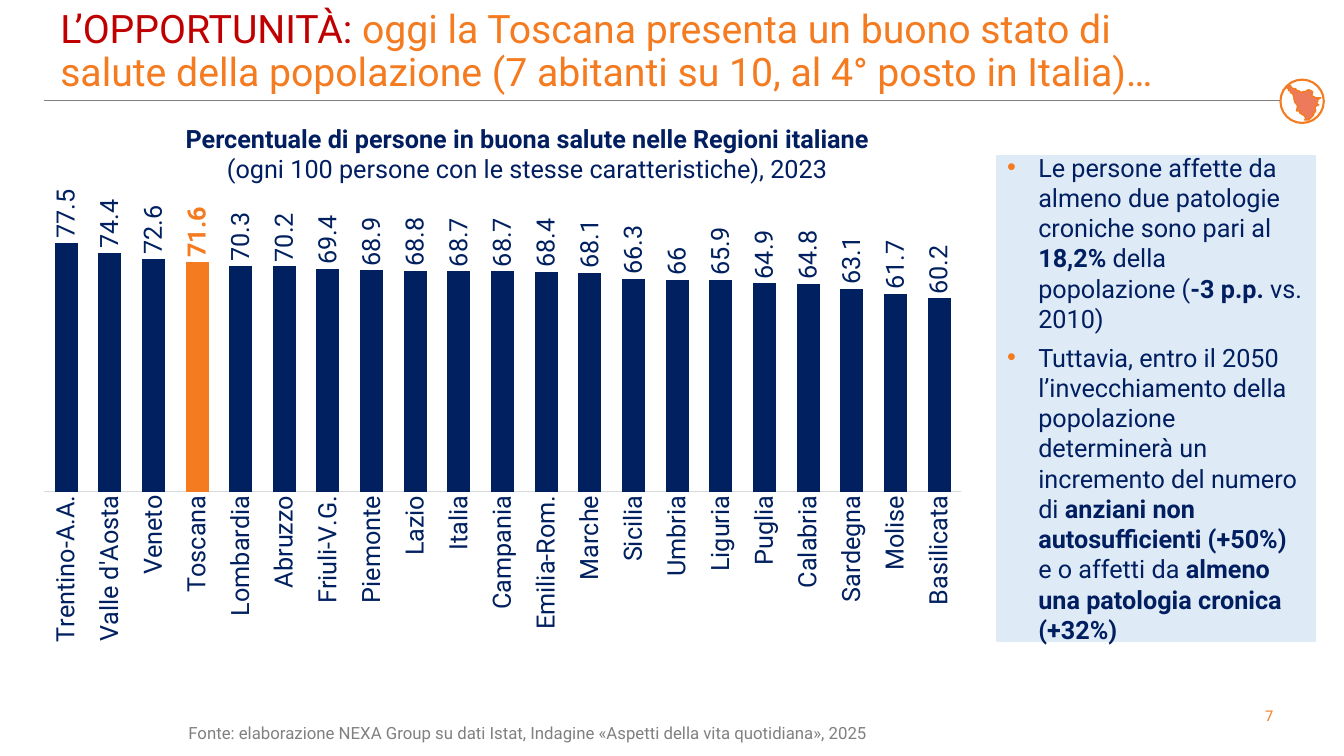
from lxml import etree
from pptx import Presentation
from pptx.chart.data import CategoryChartData
from pptx.dml.color import RGBColor
from pptx.enum.chart import XL_CHART_TYPE, XL_LABEL_POSITION, XL_TICK_LABEL_POSITION, XL_TICK_MARK
from pptx.enum.shapes import MSO_CONNECTOR, MSO_SHAPE
from pptx.enum.text import MSO_ANCHOR, PP_ALIGN
from pptx.oxml.ns import qn
from pptx.util import Inches, Pt

COLUMNS = XL_CHART_TYPE.COLUMN_CLUSTERED
OUTSIDE = XL_LABEL_POSITION.OUTSIDE_END
NEXT_TO_AXIS, NO_TICK = XL_TICK_LABEL_POSITION.NEXT_TO_AXIS, XL_TICK_MARK.NONE
LEFT, CENTER = PP_ALIGN.LEFT, PP_ALIGN.CENTER
TOP, MIDDLE = MSO_ANCHOR.TOP, MSO_ANCHOR.MIDDLE

FONT = "Roboto"
ORANGE = RGBColor(0xF4, 0x7B, 0x20)
RED = RGBColor(0xC0, 0x00, 0x00)
NAVY = RGBColor(0x00, 0x1E, 0x60)
CHART_NAVY = RGBColor(0x00, 0x20, 0x60)
GREY = RGBColor(0x80, 0x80, 0x80)
AXIS_GREY = RGBColor(0xD9, 0xD9, 0xD9)
PALE_BLUE = RGBColor(0xDE, 0xEB, 0xF7)
MAP_RED = RGBColor(0xE8, 0x4C, 0x22)
WHITE = RGBColor(0xFF, 0xFF, 0xFF)

# Content: a paragraph is a list of spans (text, format)
BOLD = {"bold": True}
TITLE = [[
    ("L’OPPORTUNITÀ: ", {"color": RED}),
    ("oggi la Toscana presenta un buono stato di salute della popolazione "
     "(7 abitanti su 10, al 4° posto in Italia)…", {}),
]]
CHART_TITLE = [[
    ("Percentuale di persone in buona salute nelle Regioni italiane\n", BOLD),
    ("(ogni 100 persone con le stesse caratteristiche), 2023", {}),
]]
SOURCE = [[("Fonte: elaborazione NEXA Group su dati Istat, "
            "Indagine «Aspetti della vita quotidiana», 2025", {})]]
PAGE_NUMBER = [[("7", {})]]
FINDINGS = [
    [("Le persone affette da almeno due patologie croniche sono pari al ", {}),
     ("18,2%", BOLD), (" della popolazione (", {}), ("-3 p.p. ", BOLD), ("vs. 2010)", {})],
    [("Tuttavia, entro il 2050 l’invecchiamento della popolazione determinerà "
      "un incremento del numero di ", {}),
     ("anziani non autosufficienti (+50%) ", BOLD), ("e o affetti da ", {}),
     ("almeno una patologia cronica (+32%)", BOLD)],
]
HEALTH = {
    "Trentino-A.A.": 77.5, "Valle d'Aosta": 74.4, "Veneto": 72.6, "Toscana": 71.6,
    "Lombardia": 70.3, "Abruzzo": 70.2, "Friuli-V.G.": 69.4, "Piemonte": 68.9,
    "Lazio": 68.8, "Italia": 68.7, "Campania": 68.7, "Emilia-Rom.": 68.4,
    "Marche": 68.1, "Sicilia": 66.3, "Umbria": 66, "Liguria": 65.9, "Puglia": 64.9,
    "Calabria": 64.8, "Sardegna": 63.1, "Molise": 61.7, "Basilicata": 60.2,
}
HIGHLIGHT = "Toscana"
# Outline of the region, in inches on the page
TUSCANY = [
    (12.95, 0.91), (12.92, 0.91), (12.91, 0.92), (12.88, 0.9), (12.87, 0.91), (12.85, 0.88),
    (12.82, 0.88), (12.8, 0.85), (12.78, 0.85), (12.76, 0.87), (12.78, 0.88), (12.78, 0.9),
    (12.8, 0.9), (12.8, 0.92), (12.82, 0.93), (12.83, 0.95), (12.84, 1.01), (12.87, 1.05),
    (12.86, 1.1), (12.9, 1.1), (12.89, 1.12), (12.94, 1.15), (12.95, 1.18), (12.94, 1.19),
    (12.98, 1.19), (13, 1.17), (13.01, 1.16), (13.03, 1.14), (13.02, 1.12), (13.04, 1.12),
    (13.05, 1.09), (13.04, 1.06), (13.08, 1.04), (13.05, 1.02), (13.07, 1.01), (13.07, 0.99),
    (13.1, 0.97), (13.05, 0.97), (13.01, 0.95), (13.02, 0.91), (12.98, 0.89), (12.96, 0.9),
]

deck = Presentation()
deck.slide_width, deck.slide_height = Inches(13.33), Inches(7.5)
page = deck.slides.add_slide(deck.slide_layouts[6])


def style_font(font, size, color, bold=False):
    font.name, font.size, font.bold = FONT, Pt(size), bold
    font.color.rgb = color


def paint(shape, fill, line, width):
    shape.shadow.inherit = False
    shape.fill.solid()
    shape.fill.fore_color.rgb = fill
    shape.line.color.rgb = line
    shape.line.width = Pt(width)


def add_bullet(para, color):
    props = para._p.get_or_add_pPr()
    props.set("marL", str(Inches(0.31)))
    props.set("indent", str(-Inches(0.31)))
    bullet_color = etree.SubElement(props, qn("a:buClr"))
    etree.SubElement(bullet_color, qn("a:srgbClr"), val=str(color))
    etree.SubElement(props, qn("a:buFont"), typeface="Arial")
    etree.SubElement(props, qn("a:buChar"), char="•")


def write(box, paragraphs, size=18, color=NAVY, align=LEFT, anchor=TOP,
          spacing=None, before=0, bullet=None):
    frame = box.text_frame
    frame.word_wrap = True
    frame.vertical_anchor = anchor
    for index, spans in enumerate(paragraphs):
        para = frame.add_paragraph() if index else frame.paragraphs[0]
        if bullet is not None:
            add_bullet(para, bullet)
        para.alignment = align
        if spacing:
            para.line_spacing = spacing
        if index and before:
            para.space_before = Pt(before)
        for text, form in spans:
            span = para.add_run()
            span.text = text.rstrip("\n")
            style_font(span.font, size, form.get("color", color), form.get("bold", False))
            if text.endswith("\n"):
                para.add_line_break()


def add_text(left, top, width, height, paragraphs, **form):
    box = page.shapes.add_textbox(Inches(left), Inches(top), Inches(width), Inches(height))
    write(box, paragraphs, **form)


# Header, footer and rule
rule = page.shapes.add_connector(MSO_CONNECTOR.STRAIGHT, Inches(0.44), Inches(1),
                                 Inches(12.89), Inches(1))
rule.line.color.rgb = GREY
rule.line.width = Pt(0.5)
etree.SubElement(rule._element.spPr, qn("a:effectLst"))
add_text(0.5, 0.05, 11.47, 0.74, TITLE, size=28, color=ORANGE, spacing=0.9)
add_text(0.23, 1.17, 10, 0.71, CHART_TITLE, align=CENTER)
add_text(1.77, 7.12, 8.37, 0.3, SOURCE, size=12, color=GREY)
add_text(12.36, 6.96, 0.46, 0.29, PAGE_NUMBER, size=10.5, color=ORANGE, align=CENTER)

# Region badge
badge = page.shapes.add_shape(MSO_SHAPE.OVAL, Inches(12.7), Inches(0.79),
                              Inches(0.43), Inches(0.43))
paint(badge, WHITE, ORANGE, 1.5)
outline = [(Inches(x), Inches(y)) for x, y in TUSCANY]
builder = page.shapes.build_freeform(*outline[0])
builder.add_line_segments(outline[1:], close=True)
region = builder.convert_to_shape()
paint(region, MAP_RED, ORANGE, 1)
region_color = region._element.spPr.find(qn("a:solidFill"))[0]
etree.SubElement(region_color, qn("a:alpha"), val="74000")

# Health chart, with room below the axis for the longest region name
data = CategoryChartData()
data.categories = list(HEALTH)
data.add_series("Series 1", list(HEALTH.values()))
chart = page.shapes.add_chart(COLUMNS, Inches(0.25), Inches(1.87), Inches(9.47),
                              Inches(4.7), data).chart
chart.has_legend = chart.has_title = False
values, regions = chart.value_axis, chart.category_axis
values.visible = values.has_major_gridlines = False
values.minimum_scale, values.maximum_scale = 0, 90
regions.major_tick_mark = regions.minor_tick_mark = NO_TICK
regions.tick_label_position = NEXT_TO_AXIS
regions.format.line.color.rgb = AXIS_GREY
regions.format.line.width = Pt(0.75)
style_font(regions.tick_labels.font, 18, CHART_NAVY)
regions.tick_labels.offset = 0

plot = chart.plots[0]
plot.gap_width, plot.overlap = 90, -27
plot.vary_by_categories = False
bars = plot.series[0]
bars.format.fill.solid()
bars.format.fill.fore_color.rgb = CHART_NAVY
labels = bars.data_labels
labels.show_value = True
labels.position = OUTSIDE
style_font(labels.font, 18, CHART_NAVY)
point = bars.points[list(HEALTH).index(HIGHLIGHT)]
point.format.fill.solid()
point.format.fill.fore_color.rgb = ORANGE
style_font(point.data_label.font, 18, ORANGE, bold=True)
point.data_label.position = OUTSIDE

# Upright labels and a fixed plot area
for body in chart._chartSpace.chart.iter(qn("a:bodyPr")):
    body.set("rot", "-5400000")
    body.set("vert", "horz")
area = chart._chartSpace.chart.plotArea
for old in area.findall(qn("c:layout")):
    area.remove(old)
layout = etree.Element(qn("c:layout"))
area.insert(0, layout)
manual = etree.SubElement(layout, qn("c:manualLayout"))
for tag, value in [("layoutTarget", "inner"), ("xMode", "edge"), ("yMode", "edge"),
                   ("x", 0.02), ("y", 0.03), ("w", 0.96), ("h", 0.61)]:
    etree.SubElement(manual, qn("c:" + tag), val=str(value))

# Findings panel
panel = page.shapes.add_shape(MSO_SHAPE.RECTANGLE, Inches(9.89), Inches(1.54),
                              Inches(3.16), Inches(4.82))
paint(panel, PALE_BLUE, PALE_BLUE, 1)
write(panel, FINDINGS, anchor=MIDDLE, before=6, bullet=ORANGE)

deck.save("out.pptx")
